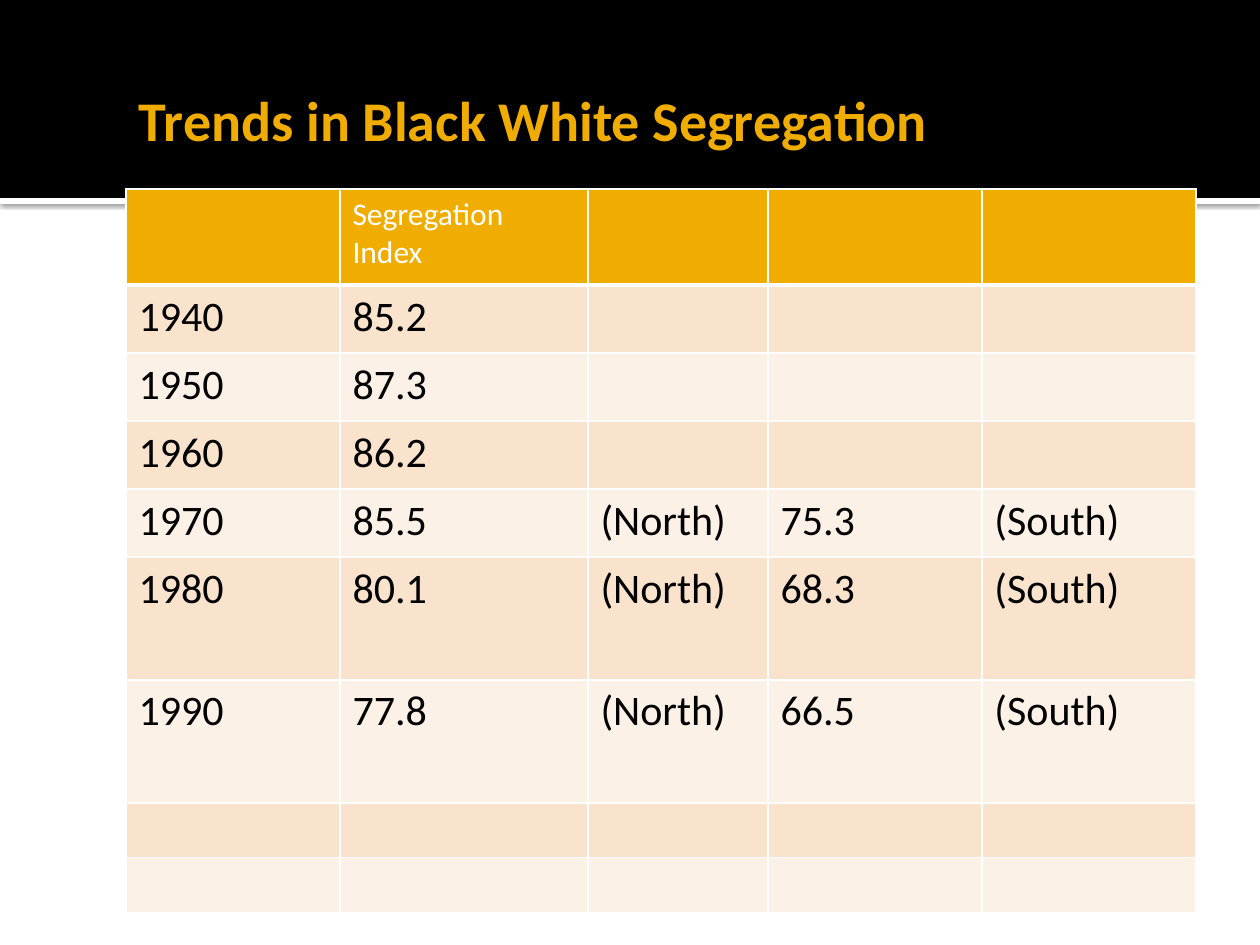
from lxml.etree import SubElement
from pptx import Presentation
from pptx.dml.color import RGBColor
from pptx.enum.shapes import MSO_SHAPE as Preset
from pptx.enum.text import MSO_ANCHOR as Anchor
from pptx.oxml.ns import qn
from pptx.util import Emu, Pt

PX_PER_INCH = 126
FONT = "Calibri"
BLACK = RGBColor(0x00, 0x00, 0x00)
WHITE = RGBColor(0xFF, 0xFF, 0xFF)
AMBER = RGBColor(0xF0, 0xAD, 0x00)
PEACH = RGBColor(0xF9, 0xE3, 0xCC)
CREAM = RGBColor(0xFC, 0xF1, 0xE7)

TITLE_FORMAT = {"name": FONT, "size": Pt(32), "bold": True}
HEADER_FORMAT = {"name": FONT, "size": Pt(18), "bold": False}
BODY_FORMAT = {"name": FONT, "size": Pt(24), "bold": False}

COLUMN_WIDTHS = [214, 248, 180, 214, 214]
ROW_HEIGHTS = [96] + [68] * 4 + [123] * 2 + [55] * 2
SEGREGATION_ROWS = [
    ["", "Segregation Index"],
    ["1940", "85.2"],
    ["1950", "87.3"],
    ["1960", "86.2"],
    ["1970", "85.5", "(North)", "75.3", "(South)"],
    ["1980", "80.1", "(North)", "68.3", "(South)"],
    ["1990", "77.8", "(North)", "66.5", "(South)"],
    [],
    [],
]


def px(length):
    return Emu(round(length * 914400 / PX_PER_INCH))


def box(*lengths):
    return [px(length) for length in lengths]


def write(frame, text, font_format, color):
    run = frame.paragraphs[0].add_run()
    run.text = text
    for attribute, value in font_format.items():
        setattr(run.font, attribute, value)
    run.font.color.rgb = color


def add_band(slide, bounds, color):
    band = slide.shapes.add_shape(Preset.RECTANGLE, *box(*bounds))
    band.shadow.inherit = False
    band.fill.solid()
    band.fill.fore_color.rgb = color
    band.line.fill.background()
    return band


def add_shadow(band):
    effects = band._element.spPr.find(qn("a:effectLst"))
    shadow = SubElement(effects, qn("a:outerShdw"), blurRad=str(Pt(2.5)),
                        dist=str(Pt(0.8)), dir="5400000", rotWithShape="0")
    color = SubElement(shadow, qn("a:srgbClr"), val=str(BLACK))
    SubElement(color, qn("a:alpha"), val="60000")


def add_title(slide, text):
    title = slide.shapes.add_textbox(*box(126, 71, 1071, 97))
    frame = title.text_frame
    frame_format = {
        "word_wrap": True,
        "vertical_anchor": Anchor.MIDDLE,
        "margin_left": px(13),
        "margin_right": px(6),
        "margin_top": px(6),
        "margin_bottom": px(6),
    }
    for attribute, value in frame_format.items():
        setattr(frame, attribute, value)
    write(frame, text, TITLE_FORMAT, AMBER)


def set_borders(cell, bottom_width):
    properties = cell._tc.get_or_add_tcPr()
    for side, width in {"L": 1, "R": 1, "T": 1, "B": bottom_width}.items():
        border = SubElement(properties, qn(f"a:ln{side}"), w=str(Pt(width)))
        fill = SubElement(border, qn("a:solidFill"))
        SubElement(fill, qn("a:srgbClr"), val=str(WHITE))


def add_segregation_table(slide):
    bounds = box(126, 189, sum(COLUMN_WIDTHS), sum(ROW_HEIGHTS))
    table = slide.shapes.add_table(len(ROW_HEIGHTS), len(COLUMN_WIDTHS), *bounds).table
    for column, width in zip(table.columns, COLUMN_WIDTHS):
        column.width = px(width)
    for index, (row, height, texts) in enumerate(
            zip(table.rows, ROW_HEIGHTS, SEGREGATION_ROWS)):
        row.height = px(height)
        is_header = index == 0
        row_color = AMBER if is_header else (CREAM, PEACH)[index % 2]
        for cell in row.cells:
            set_borders(cell, 3 if is_header else 1)
            cell.fill.solid()
            cell.fill.fore_color.rgb = row_color
        for cell, text in zip(row.cells, texts):
            if text:
                write(cell.text_frame, text,
                      HEADER_FORMAT if is_header else BODY_FORMAT,
                      WHITE if is_header else BLACK)


def main():
    deck = Presentation()
    deck.slide_width, deck.slide_height = box(1260, 945)
    slide = deck.slides.add_slide(deck.slide_layouts[6])
    add_shadow(add_band(slide, (0, 198, 1260, 6), WHITE))
    add_band(slide, (0, 0, 1260, 198), BLACK)
    add_title(slide, "Trends in Black White Segregation")
    add_segregation_table(slide)
    deck.save("out.pptx")


if __name__ == "__main__":
    main()
